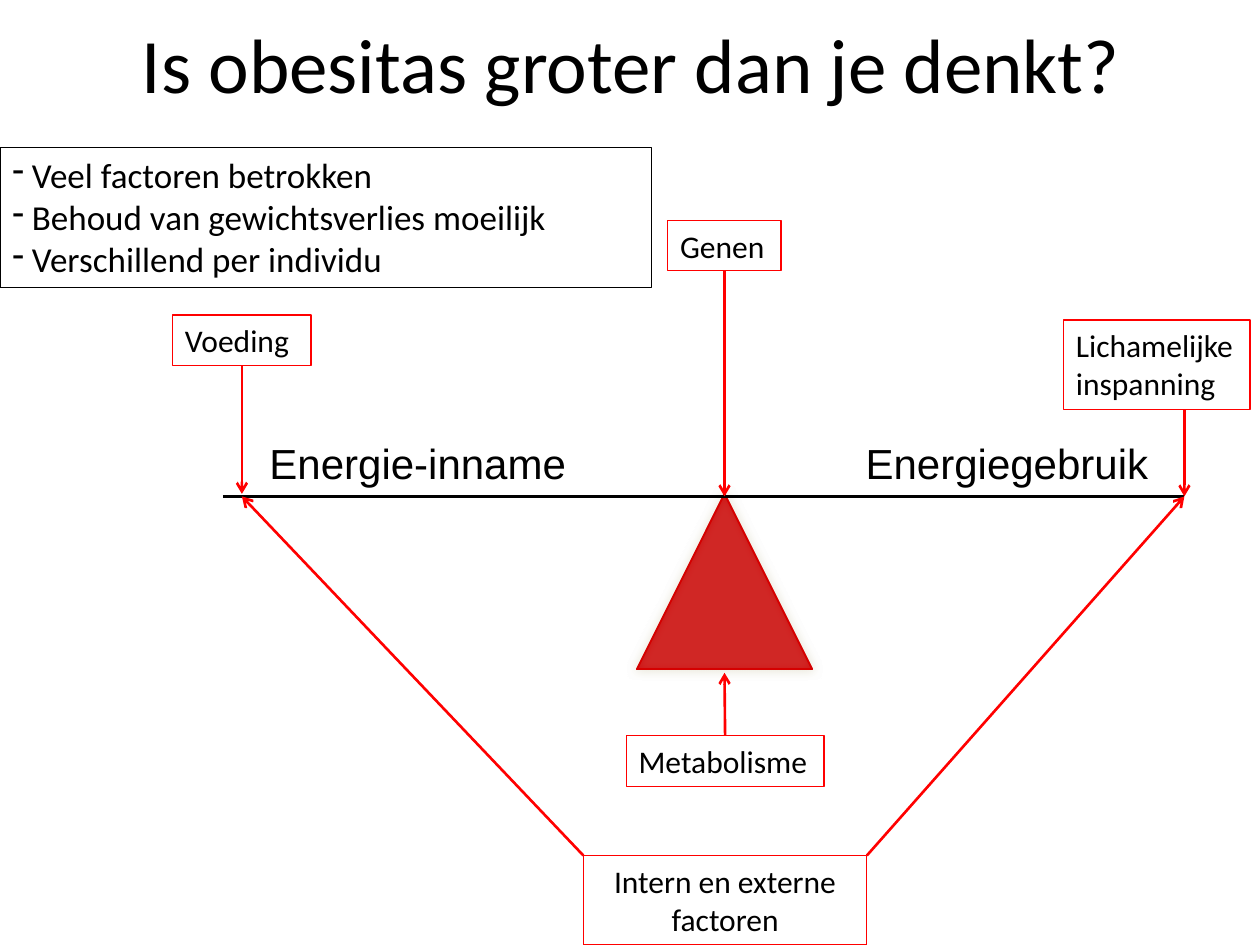
from lxml import etree
from pptx import Presentation
from pptx.dml.color import RGBColor
from pptx.enum.shapes import MSO_CONNECTOR, MSO_SHAPE
from pptx.enum.text import MSO_ANCHOR, MSO_AUTO_SIZE, PP_ALIGN
from pptx.oxml import parse_xml
from pptx.oxml.ns import nsdecls, qn
from pptx.util import Inches, Pt

COLORS = {"black": "000000", "red": "FF0000", "fill": "CB0000",
          "edge": "D50000", "glow": "EEECE1"}
BOTTOM, TOP = 2, 0
BEAM_Y = 3.94
LEFT_END, PIVOT_X, RIGHT_END = 1.92, 5.75, 9.4


def rgb(name):
    return RGBColor.from_string(COLORS[name])


def inches(box):
    return [Inches(v) for v in box]


def set_text(sp, text, size, font="Calibri", align=PP_ALIGN.LEFT, anchor=MSO_ANCHOR.TOP):
    tf = sp.text_frame
    tf.text = text
    tf.word_wrap = True
    tf.vertical_anchor = anchor
    for p in tf.paragraphs:
        p.alignment = align
        for r in p.runs:
            r.font.size = Pt(size)
            r.font.name = font
            r.font.color.rgb = rgb("black")


def add_text(slide, box, text, size, **style):
    sp = slide.shapes.add_textbox(*inches(box))
    set_text(sp, text, size, **style)


def add_box(slide, box, text, size=18, line="red", align=PP_ALIGN.LEFT):
    sp = slide.shapes.add_shape(MSO_SHAPE.RECTANGLE, *inches(box))
    sp.shadow.inherit = False
    sp.fill.background()
    sp.line.color.rgb = rgb(line)
    sp.line.width = Pt(0.75)
    set_text(sp, text, size, align=align)
    sp.text_frame.auto_size = MSO_AUTO_SIZE.SHAPE_TO_FIT_TEXT
    return sp


def add_line(slide, start, end, color="red", width=1.5, arrow=True):
    cxn = slide.shapes.add_connector(MSO_CONNECTOR.STRAIGHT, *inches(start + end))
    cxn.line.color.rgb = rgb(color)
    cxn.line.width = Pt(width)
    if arrow:
        etree.SubElement(cxn.line._get_or_add_ln(), qn("a:tailEnd"), type="arrow")
    etree.SubElement(cxn._element.spPr, qn("a:effectLst"))
    return cxn


def add_fulcrum(slide, box):
    """Translucent red triangle with a soft glow-like shadow."""
    sp = slide.shapes.add_shape(MSO_SHAPE.ISOSCELES_TRIANGLE, *inches(box))
    sp.fill.solid()
    sp.fill.fore_color.rgb = rgb("fill")
    color = sp._element.spPr.find(qn("a:solidFill"))[0]
    etree.SubElement(color, qn("a:alpha"), val="80000")
    sp.line.color.rgb = rgb("edge")
    sp.line.width = Pt(1)
    sp._element.spPr.append(parse_xml(
        f'<a:effectLst {nsdecls("a")}><a:outerShdw blurRad="{Pt(6)}" dist="0" dir="0">'
        f'<a:srgbClr val="{COLORS["glow"]}"><a:alpha val="80000"/></a:srgbClr>'
        '</a:outerShdw></a:effectLst>'))


def add_balance(slide, box):
    """Beam on a two-layer fulcrum, with a label above each arm."""
    left, top, width, height = box
    side = 1.39
    for _ in range(2):
        add_fulcrum(slide, (PIVOT_X - side / 2, top + height - side, side, side))
    add_line(slide, (left, BEAM_Y), (left + width, BEAM_Y), "black", 2, arrow=False)
    label_w = 2.92
    for text, x, align in (("Energie-inname", left + 0.27, PP_ALIGN.LEFT),
                           ("Energiegebruik", 6.29, PP_ALIGN.RIGHT)):
        add_text(slide, (x, top - 0.5, label_w, 0.5), text, 24, font="Arial", align=align)


def add_factors(slide):
    """Factor boxes and the arrows from each one to the balance."""
    for text, box, site, end in (
            ("Voeding", (1.37, 2.5, 1.1, 0.4), BOTTOM, (LEFT_END, BEAM_Y - 0.02)),
            ("Genen", (5.3, 1.75, 0.9, 0.4), BOTTOM, (PIVOT_X, BEAM_Y)),
            ("Metabolisme", (4.97, 5.84, 1.57, 0.4), TOP, (PIVOT_X, 5.34))):
        sp = add_box(slide, box, text)
        add_line(slide, box[:2], end).begin_connect(sp, site)

    add_box(slide, (8.44, 2.54, 1.48, 0.71), "Lichamelijke inspanning")
    add_line(slide, (RIGHT_END, 3.25), (RIGHT_END, BEAM_Y))

    left, top, width, height = 4.63, 6.79, 2.25, 0.71
    add_box(slide, (left, top, width, height), "Intern en externe factoren",
            align=PP_ALIGN.CENTER)
    for x, end_x in ((left, LEFT_END), (left + width, RIGHT_END)):
        add_line(slide, (x, top), (end_x, BEAM_Y))


def add_points(slide, box, points):
    sp = add_box(slide, box, "\n".join(f" {point}" for point in points), 20, "black")
    for p in sp.text_frame.paragraphs:
        etree.SubElement(p._p.get_or_add_pPr(), qn("a:buChar"), char="-")


def main():
    prs = Presentation()
    prs.slide_width, prs.slide_height = Inches(10), Inches(7.5)
    slide = prs.slides.add_slide(prs.slide_layouts[6])
    add_text(slide, (0.51, 0, 9, 1), "Is obesitas groter dan je denkt?", 44,
             align=PP_ALIGN.CENTER, anchor=MSO_ANCHOR.MIDDLE)
    add_balance(slide, (1.77, 3.92, 7.63, 1.39))
    add_factors(slide)
    add_points(slide, (0, 1.17, 5.17, 1.11),
               ("Veel factoren betrokken", "Behoud van gewichtsverlies moeilijk",
                "Verschillend per individu"))
    prs.save("out.pptx")


if __name__ == "__main__":
    main()
